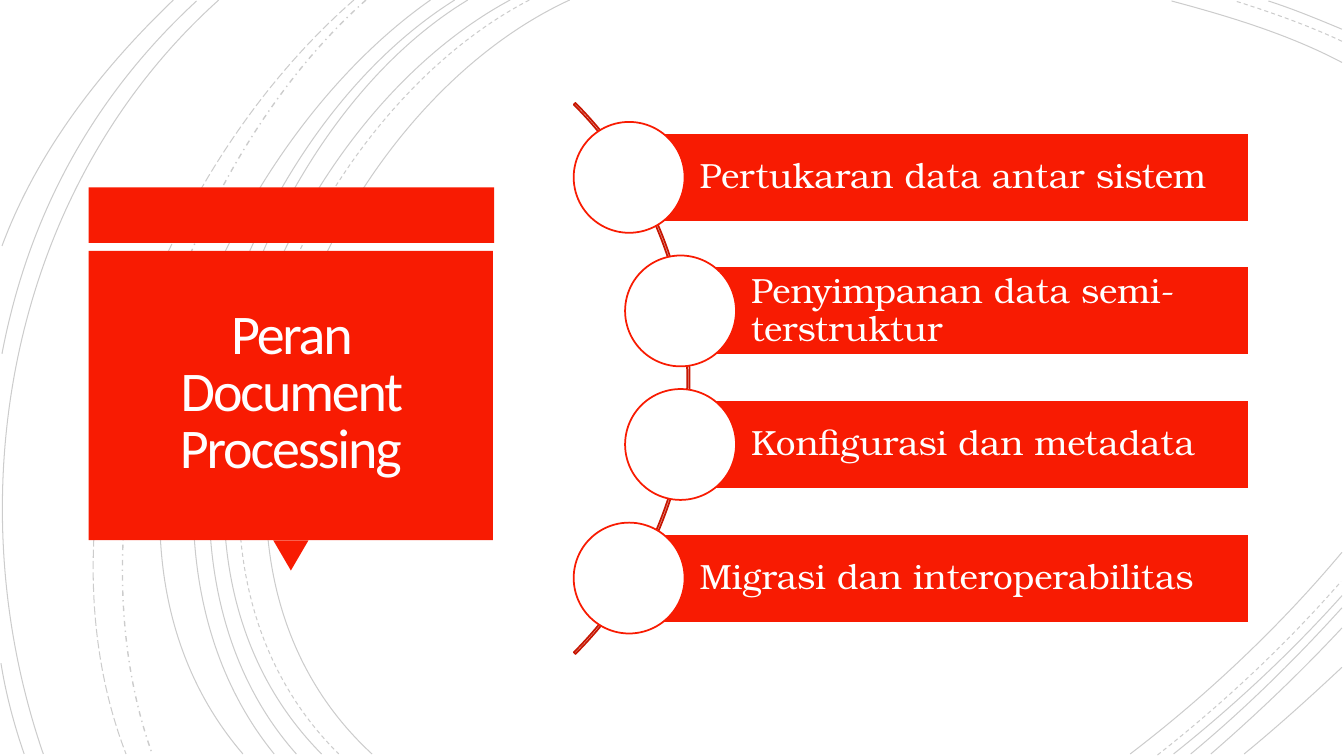
"""Build a slide listing four roles of document processing beside a title callout."""
from dataclasses import dataclass

from lxml.etree import SubElement
from pptx import Presentation
from pptx.dml.color import RGBColor
from pptx.enum.dml import MSO_LINE_DASH_STYLE as Dash
from pptx.enum.shapes import MSO_SHAPE as Preset
from pptx.enum.text import MSO_ANCHOR as Anchor, MSO_AUTO_SIZE as AutoSize, PP_ALIGN as Align
from pptx.oxml.ns import qn
from pptx.util import Inches, Pt


@dataclass(frozen=True)
class Theme:
    red = RGBColor(0xF8, 0x1B, 0x02)
    dark_red = RGBColor(0xC7, 0x16, 0x02)
    white = RGBColor(0xFF, 0xFF, 0xFF)
    title_white = RGBColor(0xFF, 0xFE, 0xFF)
    black = RGBColor(0, 0, 0)
    title_font = "Calibri"
    title_size = Pt(40)
    role_font = "TeX Gyre Bonum"
    role_size = Pt(25)
    outline = Pt(1.25)


theme = Theme()
deck = Presentation()
deck.slide_width, deck.slide_height = Inches(13.33), Inches(7.5)
page = deck.slides.add_slide(deck.slide_layouts[5])


def add_block(preset, left, top, width, height, fill=None, line=None):
    block = page.shapes.add_shape(preset, Inches(left), Inches(top), Inches(width), Inches(height))
    block.shadow.inherit = False
    if fill is None:
        block.fill.background()
    else:
        block.fill.solid()
        block.fill.fore_color.rgb = fill
    if line is None:
        block.line.fill.background()
    else:
        block.line.color.rgb = line
        block.line.width = theme.outline
    return block


def add_swirl(controls, dash, width):
    points = [(Inches(x), Inches(y)) for x, y in controls]
    builder = page.shapes.build_freeform(*points[0])
    builder.add_line_segments(points[1:], close=False)
    swirl = builder.convert_to_shape()
    segments = list(swirl.element.iter(qn("a:lnTo")))
    curve = SubElement(segments[0].getparent(), qn("a:cubicBezTo"))
    for segment in segments:
        curve.append(segment[0])
        segment.getparent().remove(segment)
    swirl.shadow.inherit = False
    swirl.fill.background()
    swirl.line.color.rgb = theme.black
    swirl.line.width = Pt(width)
    swirl.line.dash_style = dash
    color = swirl.element.spPr.find(".//" + qn("a:srgbClr"))
    SubElement(color, qn("a:alpha")).set("val", "20000")


swirls = [
    (((5.65, 0), (3.15, 1.15), (1.43, 5.4), (3.69, 7.48)), Dash.SOLID, 0.75),
    (((13.31, 0.62), (12.78, 0.34), (12.18, 0.16), (11.62, 0.01)), Dash.SOLID, 0.75),
    (((11.21, 7.48), (11.97, 6.9), (12.69, 6.22), (13.31, 5.48)), Dash.SOLID, 0.75),
    (((5.25, 0), (2.85, 1.25), (1.23, 5.37), (3.36, 7.48)), Dash.DASH, 0.75),
    (((13.31, 0.41), (12.97, 0.25), (12.6, 0.12), (12.25, 0.01)), Dash.DASH, 0.75),
    (((11.48, 7.49), (12.13, 6.98), (12.75, 6.4), (13.3, 5.77)), Dash.DASH, 0.75),
    (((5.06, 0), (2.7, 1.27), (1.1, 5.37), (3.19, 7.48)), Dash.SOLID, 0.75),
    (((13.31, 0.29), (13.07, 0.19), (12.83, 0.09), (12.58, 0.01)), Dash.SOLID, 0.75),
    (((11.64, 7.48), (12.23, 7.01), (12.8, 6.48), (13.31, 5.91)), Dash.SOLID, 0.75),
    (((4.64, 0), (2.44, 1.33), (1.1, 5.41), (2.94, 7.48)), Dash.SOLID, 0.75),
    (((11.81, 7.48), (12.34, 7.04), (12.84, 6.55), (13.31, 6.03)), Dash.SOLID, 0.75),
    (((4.51, 0), (2.31, 1.38), (0.97, 5.33), (2.72, 7.48)), Dash.SOLID, 0.75),
    (((12.01, 7.48), (12.46, 7.09), (12.9, 6.67), (13.31, 6.23)), Dash.SOLID, 0.75),
    (((4.27, 0), (2.17, 1.47), (0.53, 5.29), (2.41, 7.48)), Dash.SOLID, 0.75),
    (((12.34, 7.48), (12.67, 7.21), (12.99, 6.92), (13.31, 6.62)), Dash.SOLID, 0.75),
    (((3.63, 0), (1.76, 1.66), (0.65, 5.09), (1.51, 7.48)), Dash.DASH_DOT, 1),
    (((3.51, 0), (1.57, 1.69), (0.29, 4.99), (1.25, 7.48)), Dash.LONG_DASH, 0.75),
    (((2.17, 0), (0.11, 1.85), (-0.46, 4.9), (0.43, 7.48)), Dash.SOLID, 0.75),
    (((1.95, 0.01), (0.92, 0.96), (0.28, 2.14), (0.02, 3.51)), Dash.SOLID, 0.75),
    (((0.01, 6.58), (0.06, 6.89), (0.14, 7.19), (0.24, 7.48)), Dash.SOLID, 0.75),
    (((1.72, 0), (1, 0.69), (0.37, 1.5), (0.02, 2.44)), Dash.SOLID, 0.75),
]
for controls, dash, width in swirls:
    add_swirl(controls, dash, width)

add_block(Preset.RECTANGLE, 0.88, 1.86, 4.02, 0.55, theme.red)
pointer = add_block(Preset.ISOSCELES_TRIANGLE, 2.71, 5.36, 0.35, 0.3, theme.red)
pointer.rotation = 180
add_block(Preset.RECTANGLE, 0.88, 2.49, 4.01, 2.87, theme.red)

title = page.shapes.title
page.shapes.element.append(title.element)
title.left, title.top, title.width, title.height = map(Inches, (0.97, 2.57, 3.83, 2.69))
frame = title.text_frame
frame.word_wrap = True
frame.auto_size = AutoSize.NONE
frame.vertical_anchor = Anchor.MIDDLE
frame.margin_left = frame.margin_right = frame.margin_top = frame.margin_bottom = Inches(0.25)
para = frame.paragraphs[0]
para.alignment = Align.CENTER
para.line_spacing = 0.85
para.font.name, para.font.size = theme.title_font, theme.title_size
para.font.color.rgb = theme.title_white
span = para.add_run()
span.text = "Peran Document Processing"
span.font._element.set("spc", "-150")

arc = add_block(Preset.BLOCK_ARC, -0.89, -0.11, 7.73, 7.73, line=theme.dark_red)
for index, value in enumerate((189, 27, 0.003)):
    arc.adjustments[index] = value

roles = [
    ("Pertukaran data antar sistem", 6.24),
    ("Penyimpanan data semi-terstruktur", 6.75),
    ("Konfigurasi dan metadata", 6.75),
    ("Migrasi dan interoperabilitas", 6.24),
]
bar_right, bar_height, circle_size, first_middle, pitch = 12.39, 0.88, 1.1, 1.76, 1.325
for row, (role, left) in enumerate(roles):
    middle = first_middle + row * pitch
    bar = add_block(Preset.RECTANGLE, left, middle - bar_height / 2, bar_right - left, bar_height,
                    theme.red, theme.white)
    frame = bar.text_frame
    frame.word_wrap = True
    frame.vertical_anchor = Anchor.MIDDLE
    frame.margin_left = Inches(0.7)
    frame.margin_right = frame.margin_top = frame.margin_bottom = Inches(0.07)
    para = frame.paragraphs[0]
    para.text = role
    para.alignment = Align.LEFT
    para.line_spacing = 0.9
    para.font.name, para.font.size = theme.role_font, theme.role_size
    para.font.color.rgb = theme.white
    add_block(Preset.OVAL, left - circle_size / 2, middle - circle_size / 2, circle_size, circle_size,
              theme.white, theme.red)

deck.save("out.pptx")
